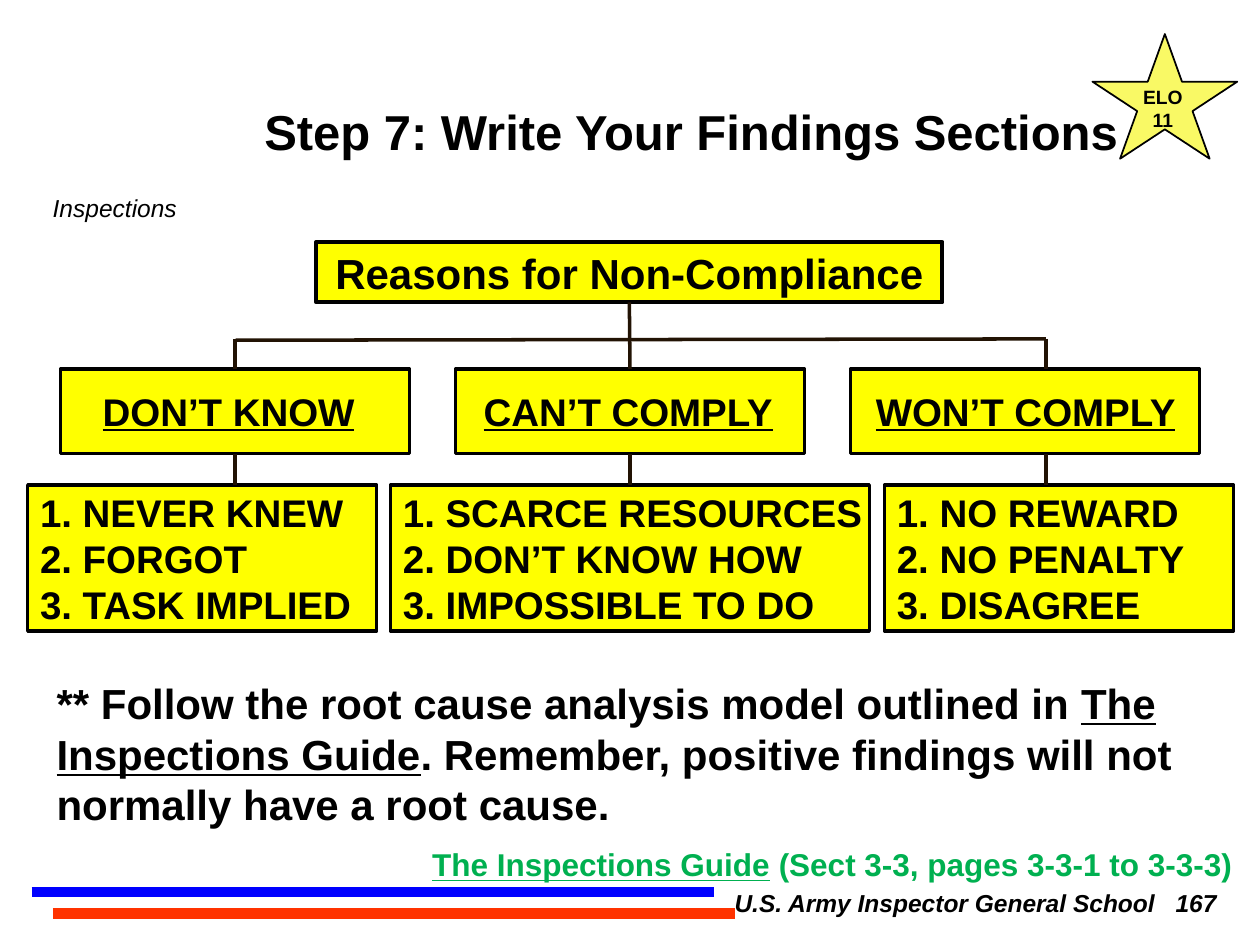
from lxml import etree
from pptx import Presentation
from pptx.dml.color import RGBColor
from pptx.enum.shapes import MSO_CONNECTOR as Link, MSO_SHAPE as Form
from pptx.enum.text import MSO_ANCHOR as Anchor, MSO_AUTO_SIZE as Fit, PP_ALIGN as Align
from pptx.oxml.ns import qn
from pptx.util import Inches, Pt

COLUMNS, ROWS = 100, 75
TOP, BOTTOM = 0, 2


def color(value):
    return RGBColor.from_string(value)


def write(frame, paragraphs, size=22, ink="000000", bold=True, italic=False,
          align=Align.LEFT, anchor=Anchor.TOP, wrap=True, tab=None):
    """Each paragraph is a list of (text, underlined) pairs."""
    frame.word_wrap, frame.auto_size = wrap, Fit.NONE
    frame.vertical_anchor = anchor
    for index, pieces in enumerate(paragraphs):
        para = frame.add_paragraph() if index else frame.paragraphs[0]
        para.alignment = align
        if tab:
            stops = etree.SubElement(para._p.get_or_add_pPr(), qn("a:tabLst"))
            etree.SubElement(stops, qn("a:tab"), pos=str(tab), algn="l")
        for text, underlined in pieces:
            span = para.add_run()
            span.text = text
            font = span.font
            font.name, font.size, font.bold, font.italic = "Arial", Pt(size), bold, italic
            font.underline = underlined
            font.color.rgb = color(ink)


class Chart:
    """Holds the style and the current page; lengths are grid columns and rows."""
    fill, edge, link = "FFFF00", "000000", "221304"

    def __init__(self, deck):
        self.column = deck.slide_width / COLUMNS
        self.row = deck.slide_height / ROWS
        self.page = deck.slides.add_slide(deck.slide_layouts[5])
        self.shapes = self.page.shapes

    def place(self, left, top, width, height):
        return [round(left * self.column), round(top * self.row),
                round(width * self.column), round(height * self.row)]

    def title(self, area, text, **style):
        box = self.shapes.title
        box.left, box.top, box.width, box.height = self.place(*area)
        write(box.text_frame, [[(text, False)]], **style)

    def text(self, area, paragraphs, indent=None, **style):
        box = self.shapes.add_textbox(*self.place(*area))
        if indent:
            box.text_frame.margin_left = Inches(indent)
        write(box.text_frame, paragraphs, **style)
        return box

    def shape(self, area, form=Form.RECTANGLE, fill=None, width=2, paragraphs=(), **style):
        item = self.shapes.add_shape(form, *self.place(*area))
        item.shadow.inherit = False
        item.fill.solid()
        item.fill.fore_color.rgb = color(fill or self.fill)
        item.line.color.rgb = color(self.edge)
        item.line.width = Pt(width)
        if paragraphs:
            write(item.text_frame, paragraphs, anchor=Anchor.MIDDLE, wrap=False, **style)
        return item

    def line(self, start, end, ink=None, width=2, source=None, target=None):
        x1, y1, x2, y2 = self.place(*start, *end)
        item = self.shapes.add_connector(Link.STRAIGHT, x1, y1, x2, y2)
        item.line.color.rgb = color(ink or self.link)
        item.line.width = Pt(width)
        etree.SubElement(item._element.spPr, qn("a:effectLst"))
        if source:
            item.begin_connect(source, BOTTOM)
        if target:
            item.end_connect(target, TOP)


def main():
    deck = Presentation()
    deck.slide_width, deck.slide_height = Inches(10), Inches(7.5)
    chart = Chart(deck)

    # Footer stripes and running labels
    chart.line((2.5, 70.8), (56.7, 70.8), "0000FF", 6)
    chart.line((4.2, 72.5), (58.3, 72.5), "FF3300", 6)
    chart.text((3.2, 14.8, 12.6, 5), [[("Inspections", False)]],
               size=14, bold=False, italic=True)
    chart.text((55, 70, 45, 5), [[("U.S. Army Inspector General School\t167", False)]],
               indent=0.33, size=14, italic=True, tab=Inches(3.5))

    # Guidance, title and reference
    chart.text((3.5, 53.3, 93.5, 17.8), [[
        ("** Follow the root cause analysis model outlined in ", False),
        ("The Inspections Guide", True),
        (". Remember, positive findings will not normally have a root cause.", False),
    ]], size=24)
    chart.title((19.7, 7.5, 70.3, 5.7), "Step 7: Write Your Findings Sections",
                size=28, align=Align.CENTER, anchor=Anchor.MIDDLE, wrap=False)
    chart.text((33.2, 66.7, 65.7, 3.8), [[
        ("The Inspections Guide", True), (" (Sect 3-3, pages 3-3-1 to 3-3-3)", False),
    ]], size=18, ink="00B050", align=Align.CENTER, anchor=Anchor.MIDDLE, wrap=False)

    # Objective star
    chart.shape((86.7, 2.7, 11.5, 9.9), Form.STAR_5_POINT, fill="F9F965", width=1)
    chart.text((87.5, 6.3, 9.6, 4.7), [[("ELO", False)], [("11", False)]],
               size=11, align=Align.CENTER)

    # Root of the tree and its crossbar
    root = chart.shape((25.1, 19.2, 49.7, 4.8), width=2.25, size=24, align=Align.CENTER,
                       paragraphs=[[("Reasons for Non-Compliance", False)]])
    chart.line((18.7, 27), (83, 26.9))

    # Branches: label, box left, label centre, stem column, list left, list width, causes
    branches = [
        ("DON’T KNOW", 4.8, 18.15, 18.65, 2.2, 27.7,
         ["1. NEVER KNEW", "2. FORGOT", "3. TASK IMPLIED"]),
        ("CAN’T COMPLY", 36.15, 49.85, 50, 31, 38,
         ["1. SCARCE RESOURCES", "2. DON’T KNOW HOW", "3. IMPOSSIBLE TO DO"]),
        ("WON’T COMPLY", 67.5, 81.4, 83, 70.2, 27.7,
         ["1. NO REWARD", "2. NO PENALTY", "3. DISAGREE"]),
    ]
    for label, left, centre, stem, list_left, list_width, causes in branches:
        reason = chart.shape((left, 29.3, 27.7, 6.7))
        chart.text((centre - 12.5, 29.4, 25, 6.4), [[(label, True)]],
                   align=Align.CENTER, anchor=Anchor.MIDDLE, wrap=False)
        details = chart.shape((list_left, 38.5, list_width, 11.6), align=Align.LEFT,
                              paragraphs=[[(cause, False)] for cause in causes])
        central = stem == 50
        centred = abs(left + 27.7 / 2 - stem) < 0.1
        chart.line((stem, 24 if central else 26.9), (stem, 29.3),
                   source=root if central else None, target=reason if centred else None)
        chart.line((stem, 36), (stem, 38.5),
                   source=reason if centred else None, target=details if central else None)

    deck.save("out.pptx")


if __name__ == "__main__":
    main()
